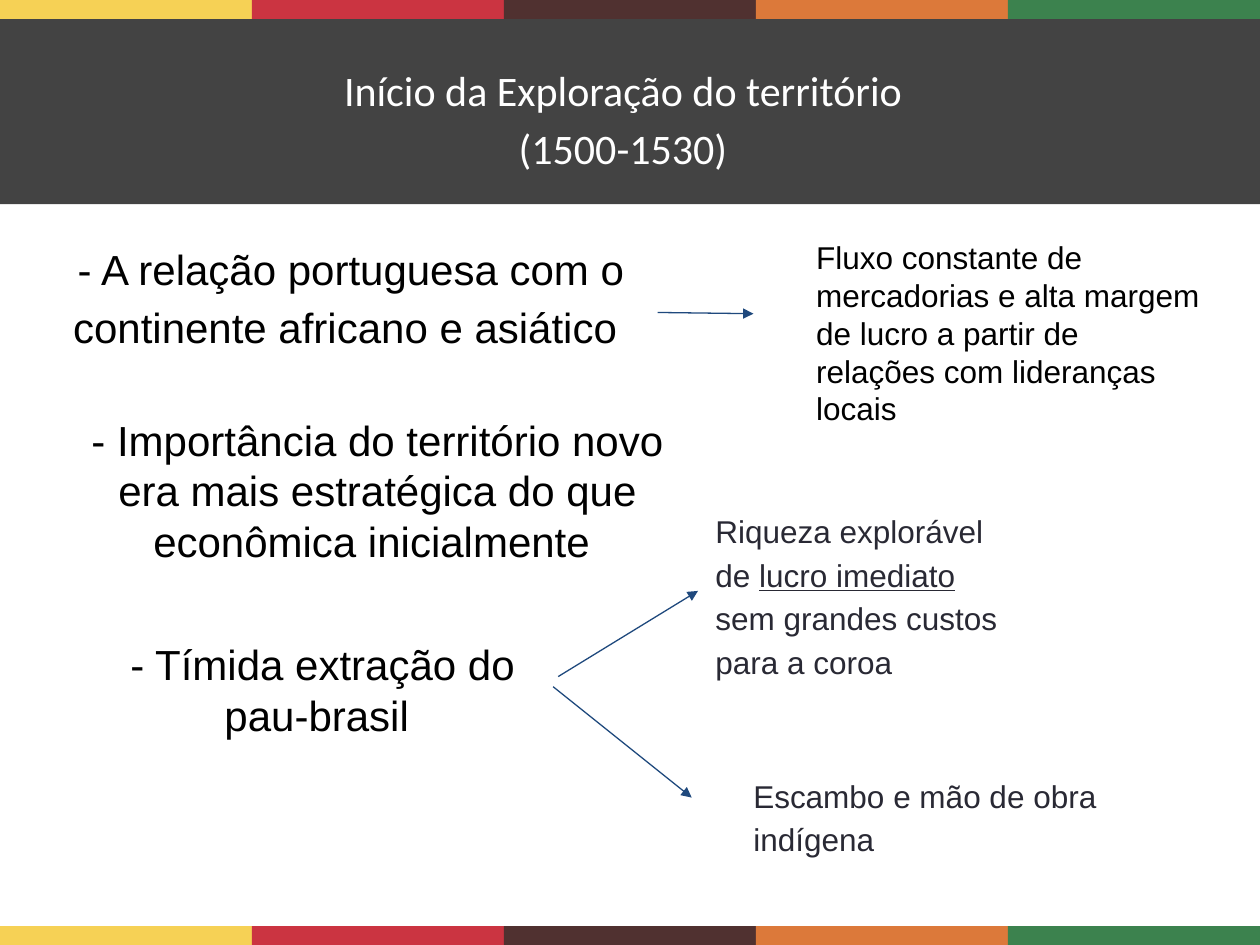
from dataclasses import dataclass

from lxml.etree import SubElement
from pptx import Presentation
from pptx.dml.color import RGBColor
from pptx.enum.shapes import MSO_CONNECTOR, MSO_SHAPE
from pptx.enum.text import MSO_ANCHOR, MSO_AUTO_SIZE, PP_ALIGN
from pptx.oxml.ns import qn
from pptx.util import Inches, Pt


@dataclass(frozen=True)
class Theme:
    """Colours, fonts and type sizes of the deck."""
    stripes: tuple = ("F6D155", "CB3441", "503130", "DC793A", "3C824E")
    band: str = "434343"
    light: str = "FFFFFF"
    dark: str = "000000"
    soft: str = "292934"
    arrow: str = "1F497D"
    heading_font: str = "Calibri"
    text_font: str = "Arial"
    large: int = 24
    small: int = 18
    loose: float = 1.15


@dataclass(frozen=True)
class Box:
    """An area in cells of a grid with 100 columns and 75 rows."""
    left: float
    top: float
    width: float
    height: float

    def area(self, left, top, width, height):
        """Return an area placed relative to this one."""
        return Box(self.left + left, self.top + top, width, height)

    def lengths(self):
        """Return left, top, width and height as slide lengths."""
        return [Inches(cells / 10) for cells in (self.left, self.top, self.width, self.height)]


THEME = Theme()


def add_block(page, box, colour):
    """Draw a plain filled rectangle."""
    block = page.shapes.add_shape(MSO_SHAPE.RECTANGLE, *box.lengths())
    block.shadow.inherit = False
    block.fill.solid()
    block.fill.fore_color.rgb = RGBColor.from_string(colour)
    block.line.fill.background()


def add_stripes(page, box):
    """Divide a strip evenly among the stripe colours."""
    width = box.width / len(THEME.stripes)
    for index, colour in enumerate(THEME.stripes):
        add_block(page, box.area(index * width, 0, width, box.height), colour)


def write(shape, box, paragraphs, colour, size, font=THEME.text_font,
          align=PP_ALIGN.LEFT, spacing=1.0):
    """Place a text shape; each paragraph is a list of (text, underlined) spans."""
    shape.left, shape.top, shape.width, shape.height = box.lengths()
    frame = shape.text_frame
    frame.word_wrap = True
    frame.auto_size = MSO_AUTO_SIZE.NONE
    frame.vertical_anchor = MSO_ANCHOR.TOP
    frame.margin_left = frame.margin_right = Inches(0.1)
    frame.margin_top = frame.margin_bottom = Inches(0.1)
    for index, spans in enumerate(paragraphs):
        para = frame.add_paragraph() if index else frame.paragraphs[0]
        para.alignment, para.line_spacing = align, spacing
        para.space_before = Pt(0)
        para.font.name, para.font.size = font, Pt(size)
        para.font.color.rgb = RGBColor.from_string(colour)
        for text, underlined in spans:
            span = para.add_run()
            span.text = text
            if underlined:
                span.font.underline = True


def add_text(page, box, spans, colour, size, **style):
    """Add a text box holding one paragraph."""
    shape = page.shapes.add_textbox(*box.lengths())
    write(shape, box, [spans], colour, size, **style)


def add_arrow(page, box, start, end):
    """Draw an arrow between two points of an area."""
    points = [Inches(cells / 10) for x, y in (start, end)
              for cells in (box.left + x, box.top + y)]
    arrow = page.shapes.add_connector(MSO_CONNECTOR.STRAIGHT, *points)
    arrow.line.color.rgb = RGBColor.from_string(THEME.arrow)
    arrow.line.width = Pt(0.75)
    properties = arrow._element.spPr
    SubElement(properties.find(qn("a:ln")), qn("a:tailEnd"), type="triangle")
    SubElement(properties, qn("a:effectLst"))


def add_header(page, box):
    """Build the dark band, its stripes and the title."""
    add_block(page, box.area(0, 0.8, box.width, box.height - 0.8), THEME.band)
    add_stripes(page, box.area(0, 0, box.width, 1.5))
    title = page.shapes.title
    page.shapes._spTree.append(title._element)
    lines = ("Início da Exploração do território", "(1500-1530)")
    write(title, box.area(4.3, 3.5, 90.3, 11.5), [[(line, False)] for line in lines],
          THEME.light, THEME.large, font=THEME.heading_font,
          align=PP_ALIGN.CENTER, spacing=THEME.loose)


def add_topics(page, box):
    """Build the three topics in the left column."""
    style = {"colour": THEME.dark, "size": THEME.large, "align": PP_ALIGN.CENTER}
    body = page.placeholders[1]
    write(body, box.area(3.5, 1.5, 48.7, 11.5),
          [[("- A relação portuguesa com o continente africano e asiático ", False)]],
          spacing=THEME.loose, **style)
    properties = body.text_frame.paragraphs[0]._p.get_or_add_pPr()
    properties.set("marL", "0")
    properties.set("indent", "0")
    bullet = SubElement(properties, qn("a:buNone"))
    properties.find(qn("a:defRPr")).addprevious(bullet)
    add_text(page, box.area(5, 15.7, 49.9, 14.2),
             [("- Importância do território novo era mais estratégica do que "
               "econômica inicialmente ", False)], **style)
    add_text(page, box.area(7.3, 33.5, 36.6, 9),
             [("- Tímida extração do pau-brasil ", False)], **style)


def add_notes(page, box):
    """Build the explanations in the right column."""
    add_text(page, box.area(11.8, 1.7, 32.7, 16.6),
             [("Fluxo constante de mercadorias e alta margem de lucro a partir de "
               "relações com lideranças locais", False)], THEME.dark, THEME.small)
    style = {"colour": THEME.soft, "size": THEME.small, "spacing": THEME.loose}
    add_text(page, box.area(3.8, 23, 26.3, 15.4),
             [("Riqueza explorável de ", False), ("lucro imediato", True),
              (" sem grandes custos para a coroa", False)], **style)
    add_text(page, box.area(6.8, 44, 35.8, 10.2),
             [("Escambo e mão de obra indígena", False)], **style)


def add_arrows(page, box):
    """Link the topics to their explanations."""
    for start, end in (((52.2, 8.6), (59.8, 8.7)),
                       ((44.3, 37.5), (55.4, 30.7)),
                       ((43.9, 38.3), (54.9, 47.1))):
        add_arrow(page, box, start, end)


def main():
    """Build and save the deck."""
    deck = Presentation()
    deck.slide_width, deck.slide_height = Inches(10), Inches(7.5)
    page = deck.slides.add_slide(deck.slide_layouts[1])
    whole = Box(0, 0, 100, 75)
    content = whole.area(0, 16.2, 100, 57.3)
    add_header(page, whole.area(0, 0, 100, 16.2))
    add_topics(page, content)
    add_notes(page, content.area(52, 0, 48, 57.3))
    add_arrows(page, content)
    add_stripes(page, whole.area(0, 73.5, 100, 1.5))
    deck.save("out.pptx")


if __name__ == "__main__":
    main()
